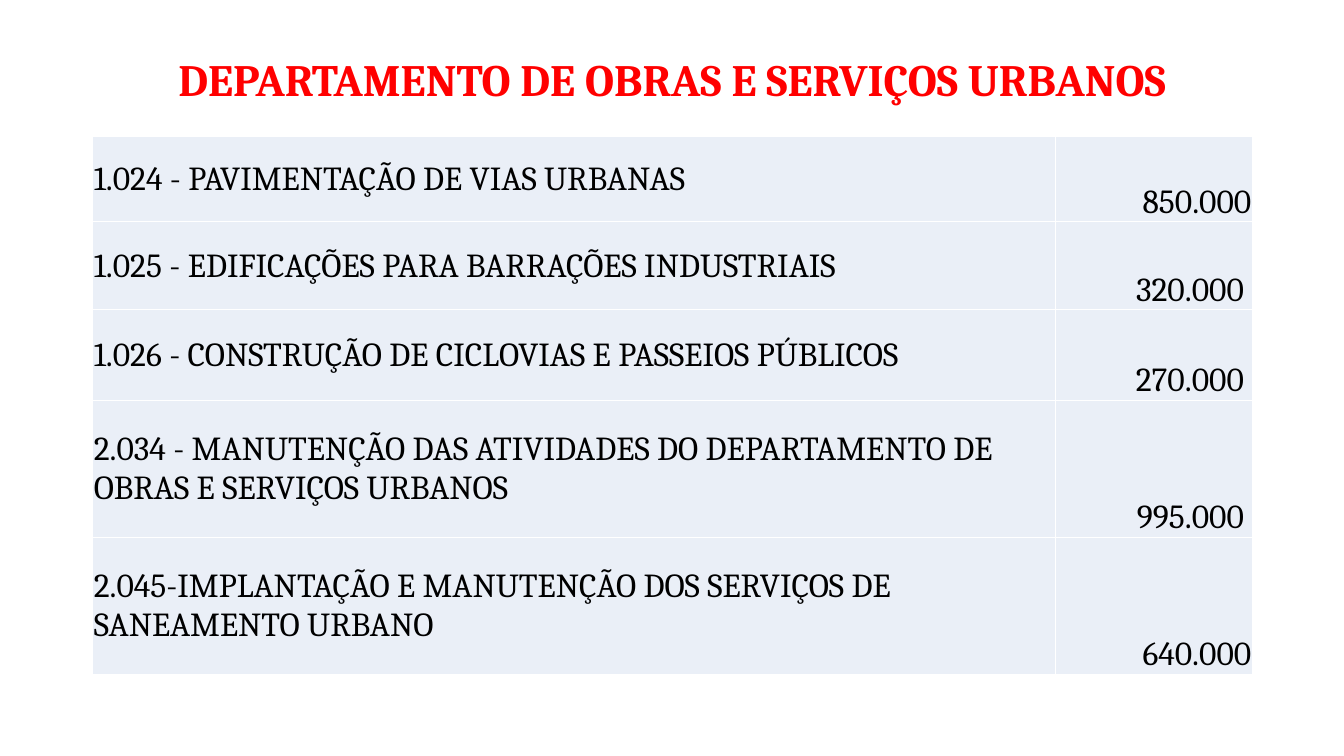
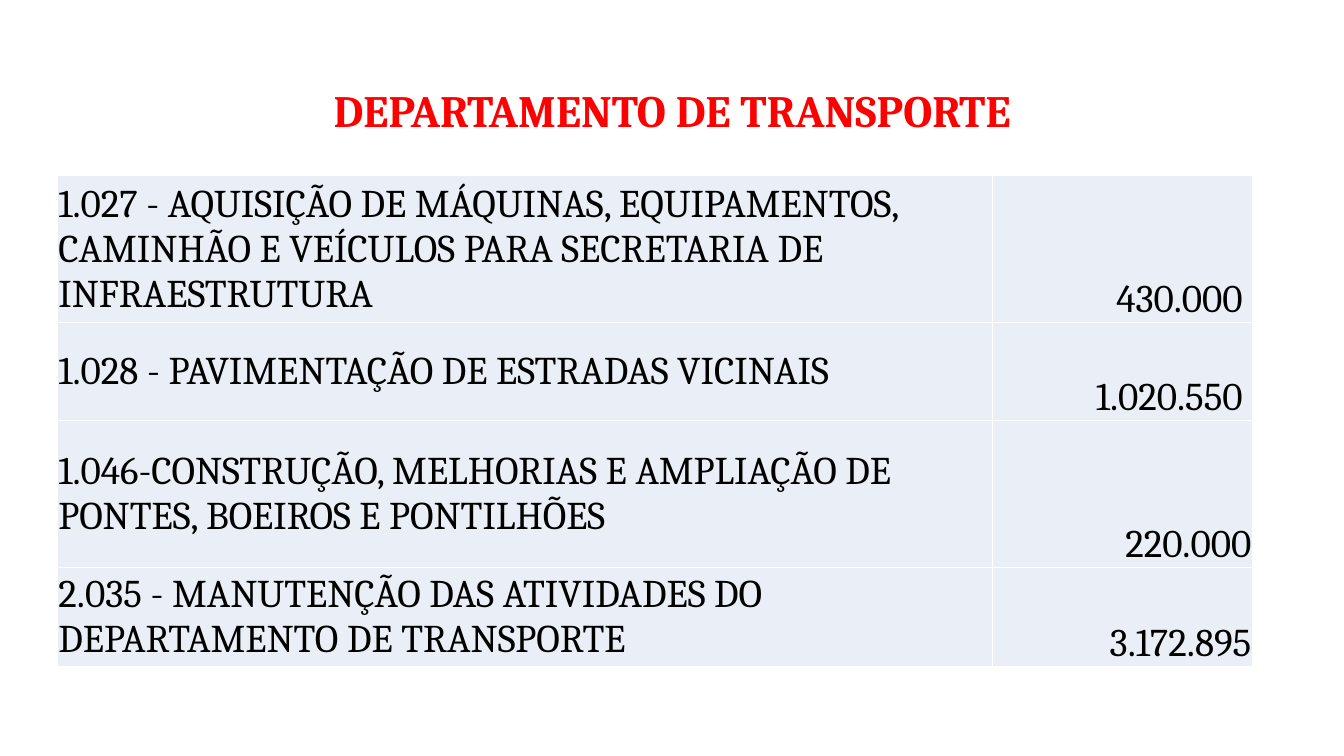
from lxml import etree
from pptx import Presentation
from pptx.dml.color import RGBColor
from pptx.enum.text import MSO_ANCHOR as ANCHOR, PP_ALIGN as ALIGN
from pptx.oxml.ns import qn
from pptx.util import Inches, Pt

FONT = "Cambria"
RED, BLACK, WHITE, PALE = "FF0000", "000000", "FFFFFF", "EAEFF7"
TITLE_SIZE = 32
TITLE_LEFT, TITLE_TOP, TITLE_WIDTH = 0.92, 0.4, 11.5
RIGHT_EDGE = TITLE_LEFT + TITLE_WIDTH
CELL_INSET = 0.01
SPACE_EM = 0.22  # width of a space, for amounts set in from the edge

# Each row: description, amount, height, amount set in by one space
DEPARTMENTS = [
    {
        "title": "DEPARTAMENTO DE OBRAS E SERVIÇOS URBANOS",
        "title_height": 0.82, "top": 1.35, "columns": (9.55, 1.95), "size": 24,
        "rows": [
            ("1.024 - PAVIMENTAÇÃO DE VIAS URBANAS", "850.000", 0.85, False),
            ("1.025 - EDIFICAÇÕES PARA BARRAÇÕES INDUSTRIAIS", "320.000", 0.87, True),
            ("1.026 - CONSTRUÇÃO DE CICLOVIAS E PASSEIOS PÚBLICOS", "270.000", 0.9, True),
            ("2.034 - MANUTENÇÃO DAS ATIVIDADES DO DEPARTAMENTO DE OBRAS E SERVIÇOS URBANOS",
             "995.000", 1.36, True),
            ("2.045-IMPLANTAÇÃO E MANUTENÇÃO DOS SERVIÇOS DE SANEAMENTO URBANO",
             "640.000", 1.36, False),
        ],
    },
    {
        "title": "DEPARTAMENTO DE TRANSPORTE",
        "title_height": 1.45, "top": 1.74, "columns": (9.27, 2.58), "size": 28,
        "rows": [
            ("1.027 - AQUISIÇÃO DE MÁQUINAS, EQUIPAMENTOS, CAMINHÃO E VEÍCULOS PARA "
             "SECRETARIA DE INFRAESTRUTURA", "430.000", 1.46, True),
            ("1.028 - PAVIMENTAÇÃO DE ESTRADAS VICINAIS", "1.020.550", 0.97, True),
            ("1.046-CONSTRUÇÃO, MELHORIAS E AMPLIAÇÃO DE PONTES, BOEIROS E PONTILHÕES",
             "220.000", 1.46, False),
            ("2.035 - MANUTENÇÃO DAS ATIVIDADES DO DEPARTAMENTO DE TRANSPORTE",
             "3.172.895", 0.98, False),
        ],
    },
]


def rgb(color):
    return RGBColor.from_string(color)


def write(tf, text, size, color, align, bold=False):
    tf.text = text
    p = tf.paragraphs[0]
    p.alignment = align
    font = p.runs[0].font
    font.name, font.size, font.bold = FONT, Pt(size), bold
    font.color.rgb = rgb(color)
    return p


def add_title(slide, text, height):
    box = slide.shapes.add_textbox(*map(Inches, (TITLE_LEFT, TITLE_TOP, TITLE_WIDTH, height)))
    tf = box.text_frame
    tf.word_wrap = True
    tf.vertical_anchor = ANCHOR.MIDDLE
    write(tf, text, TITLE_SIZE, RED, ALIGN.CENTER, True).line_spacing = 0.9


def set_borders(cell, color, width):
    tc_pr = cell._tc.get_or_add_tcPr()
    for i, side in enumerate(("lnL", "lnR", "lnT", "lnB")):
        ln = etree.Element(qn(f"a:{side}"), w=str(Pt(width)))
        fill = etree.SubElement(ln, qn("a:solidFill"))
        etree.SubElement(fill, qn("a:srgbClr"), val=color)
        tc_pr.insert(i, ln)


def fill_cell(cell, text, size, align, anchor, right_inset=CELL_INSET):
    write(cell.text_frame, text, size, BLACK, align)
    cell.vertical_anchor = anchor
    cell.margin_left = cell.margin_top = Inches(CELL_INSET)
    cell.margin_right, cell.margin_bottom = Inches(right_inset), 0
    cell.fill.solid()
    cell.fill.fore_color.rgb = rgb(PALE)
    set_borders(cell, WHITE, 1)


def add_budget(slide, rows, columns, top, size):
    """Add the table of descriptions and amounts, flush with the title's right edge."""
    width, height = sum(columns), sum(row[2] for row in rows)
    frame = slide.shapes.add_table(len(rows), len(columns), Inches(RIGHT_EDGE - width),
                                   Inches(top), Inches(width), Inches(height))
    table = frame.table
    table.first_row = table.horz_banding = False
    for column, column_width in zip(table.columns, columns):
        column.width = Inches(column_width)
    for row, (description, amount, row_height, set_in) in zip(table.rows, rows):
        row.height = Inches(row_height)
        inset = CELL_INSET + set_in * SPACE_EM * size / 72
        fill_cell(row.cells[0], description, size, ALIGN.LEFT, ANCHOR.MIDDLE)
        fill_cell(row.cells[1], amount, size, ALIGN.RIGHT, ANCHOR.BOTTOM, inset)


def main():
    prs = Presentation()
    prs.slide_width, prs.slide_height = Inches(13.33), Inches(7.5)
    for dept in DEPARTMENTS:
        slide = prs.slides.add_slide(prs.slide_layouts[6])
        add_title(slide, dept["title"], dept["title_height"])
        add_budget(slide, dept["rows"], dept["columns"], dept["top"], dept["size"])
    prs.save("out.pptx")


if __name__ == "__main__":
    main()
